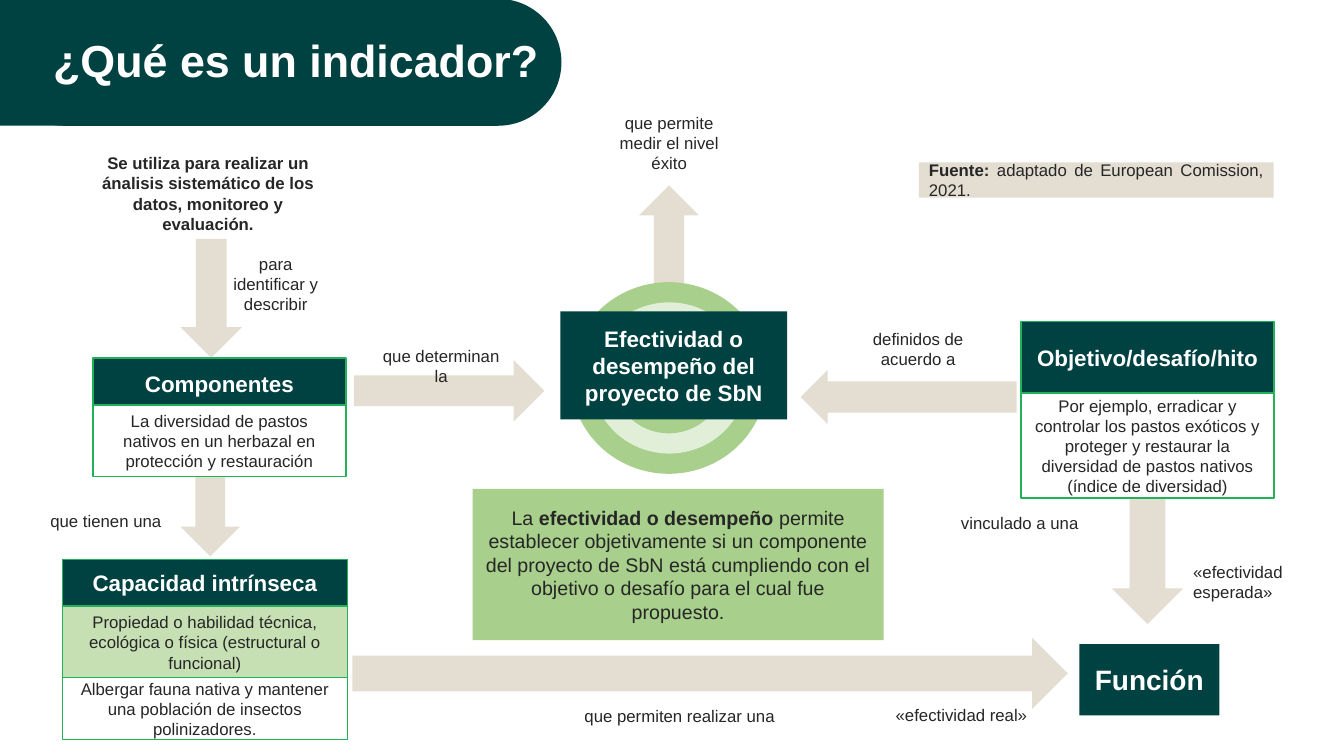
from pptx import Presentation
from pptx.dml.color import RGBColor
from pptx.enum.shapes import MSO_SHAPE
from pptx.enum.text import MSO_ANCHOR, MSO_AUTO_SIZE, PP_ALIGN
from pptx.util import Cm, Pt

RECT, ROUND, OVAL = MSO_SHAPE.RECTANGLE, MSO_SHAPE.ROUNDED_RECTANGLE, MSO_SHAPE.OVAL
DOWN, UP = MSO_SHAPE.DOWN_ARROW, MSO_SHAPE.UP_ARROW
LEFT_ARROW, RIGHT_ARROW = MSO_SHAPE.LEFT_ARROW, MSO_SHAPE.RIGHT_ARROW
TOP, MIDDLE = MSO_ANCHOR.TOP, MSO_ANCHOR.MIDDLE
FIT = MSO_AUTO_SIZE.SHAPE_TO_FIT_TEXT
LEFT, CENTER, RIGHT, JUSTIFY = PP_ALIGN.LEFT, PP_ALIGN.CENTER, PP_ALIGN.RIGHT, PP_ALIGN.JUSTIFY

DARK = RGBColor(0x00, 0x42, 0x41)
SAND = RGBColor(0xE3, 0xDE, 0xD1)
GREEN = RGBColor(0xA8, 0xD0, 0x8C)
PALE = RGBColor(0xE1, 0xEF, 0xD8)
LIGHT = RGBColor(0xC6, 0xE0, 0xB4)
BORDER = RGBColor(0x21, 0xB1, 0x58)
WHITE = RGBColor(0xFF, 0xFF, 0xFF)
INK = RGBColor(0x26, 0x26, 0x26)


class Diagram:
    font = "Arial"

    def __init__(self, slide):
        self.slide = slide

    def shape(self, kind, box, fill, border=None):
        sp = self.slide.shapes.add_shape(kind, *map(Cm, box))
        sp.shadow.inherit = False
        sp.fill.solid()
        sp.fill.fore_color.rgb = fill
        if border is None:
            sp.line.fill.background()
        else:
            sp.line.color.rgb = border
            sp.line.width = Pt(1)
        return sp

    def arrow(self, kind, box, shaft=0.5):
        sp = self.shape(kind, box, SAND)
        sp.adjustments[0] = shaft
        sp.adjustments[1] = 0.5

    def set_text(self, sp, text, size, color, bold=False, align=CENTER, anchor=MIDDLE):
        tf = sp.text_frame
        tf.word_wrap = True
        tf.vertical_anchor = anchor
        p = tf.paragraphs[0]
        p.alignment = align
        parts = [(text, bold)] if isinstance(text, str) else text
        for part, part_bold in parts:
            r = p.add_run()
            r.text = part
            r.font.name = self.font
            r.font.size = Pt(size)
            r.font.bold = part_bold
            r.font.color.rgb = color

    def header(self, box, text, size=16, border=None):
        self.set_text(self.shape(RECT, box, DARK, border), text, size, WHITE, True)

    def panel(self, box, text, fill=WHITE, border=None, size=12, align=CENTER):
        self.set_text(self.shape(RECT, box, fill, border), text, size, INK, align=align)

    def label(self, box, text, size=12, color=INK, bold=False, align=CENTER, fill=None):
        if fill is None:
            sp = self.slide.shapes.add_textbox(*map(Cm, box))
        else:
            sp = self.shape(RECT, box, fill)
        self.set_text(sp, text, size, color, bold, align, TOP)
        sp.text_frame.auto_size = FIT


def main():
    prs = Presentation()
    prs.slide_width, prs.slide_height = Cm(33.87), Cm(19.05)
    d = Diagram(prs.slides.add_slide(prs.slide_layouts[6]))

    d.shape(RECT, (0, -0.03, 2.24, 3.2), DARK)
    banner = d.shape(ROUND, (0, -0.03, 14.15, 3.2), DARK)
    banner.adjustments[0] = 0.5

    for kind, box, shaft in (
        (DOWN, (28.02, 12.12, 1.8, 3.61), 0.5),
        (DOWN, (4.55, 12.01, 1.5, 2.01), 0.5),
        (LEFT_ARROW, (20.18, 9.33, 5.44, 1.35), 0.58),
        (RIGHT_ARROW, (8.92, 9.07, 4.8, 1.55), 0.5),
        (RIGHT_ARROW, (8.88, 16.07, 18.03, 1.8), 0.5),
        (UP, (16.1, 4.67, 1.52, 2.46), 0.5),
        (DOWN, (4.55, 6.02, 1.55, 3), 0.5),
    ):
        d.arrow(kind, box, shaft)

    for box, fill in (
        ((14.38, 7.11, 4.95, 4.83), GREEN),
        ((14.91, 7.62, 3.91, 3.81), PALE),
        ((15.47, 8.23, 2.77, 2.69), GREEN),
    ):
        d.shape(OVAL, box, fill)

    d.panel((11.91, 12.32, 10.36, 3.81), [
        ("La ", False),
        ("efectividad o desempeño ", True),
        ("permite establecer objetivamente si un componente del proyecto de SbN está "
         "cumpliendo con el objetivo o desafío para el cual fue propuesto.", False),
    ], GREEN, size=14)

    d.header((14.12, 7.85, 5.72, 2.72), "Efectividad o desempeño del proyecto de SbN")
    d.header((25.73, 8.1, 6.38, 1.8), "Objetivo/desafío/hito", border=BORDER)
    d.header((2.34, 9.02, 6.38, 1.3), "Componentes", border=BORDER)
    d.header((1.57, 14.1, 7.19, 1.17), "Capacidad intrínseca", border=BORDER)
    d.header((27.2, 16.23, 3.53, 1.8), "Función", 20)

    for box, text, fill in (
        ((2.34, 10.21, 6.38, 1.8),
         "La diversidad de pastos nativos en un herbazal en protección y restauración", WHITE),
        ((1.57, 15.27, 7.19, 1.83),
         "Propiedad o habilidad técnica, ecológica o física (estructural o funcional)", LIGHT),
        ((1.57, 17.07, 7.19, 1.57),
         "Albergar fauna nativa y mantener una población de insectos polinizadores.", WHITE),
        ((25.73, 9.91, 6.38, 2.64),
         "Por ejemplo, erradicar y controlar los pastos exóticos y proteger y restaurar "
         "la diversidad de pastos nativos (índice de diversidad)", WHITE),
    ):
        d.panel(box, text, fill, BORDER)

    d.label((2.03, 3.73, 6.43, 1.8),
            "Se utiliza para realizar un ánalisis sistemático de los datos, monitoreo y evaluación.",
            bold=True)
    for box, text, align, fill in (
        ((5.44, 6.27, 3.02, 1.8), "para identificar y describir", CENTER, None),
        ((0.89, 12.75, 3.56, 0.76), "que tienen una", CENTER, None),
        ((13.74, 17.65, 6.78, 0.76), "que permiten realizar una", CENTER, WHITE),
        ((21.44, 8.15, 3.4, 1.27), "definidos de acuerdo a", CENTER, WHITE),
        ((9.19, 8.59, 3.86, 0.76), "que determinan la", CENTER, None),
        ((23.16, 12.8, 5.08, 0.76), "vinculado a una", CENTER, WHITE),
        ((21.44, 17.63, 4.7, 0.76), "«efectividad real»", RIGHT, None),
        ((29.82, 14.02, 3.53, 1.27), "«efectividad esperada»", LEFT, WHITE),
        ((15.01, 2.72, 3.71, 1.8), "que permite medir el nivel éxito", CENTER, None),
    ):
        d.label(box, text, align=align, fill=fill)

    d.panel((23.16, 4.09, 8.94, 0.89), [
        ("Fuente: ", True),
        ("adaptado de European Comission, 2021.", False),
    ], SAND, align=JUSTIFY)

    d.label((1.09, 0.71, 16.92, 1.63), "¿Qué es un indicador?", 32, WHITE, True, LEFT)

    prs.save("out.pptx")


if __name__ == "__main__":
    main()
